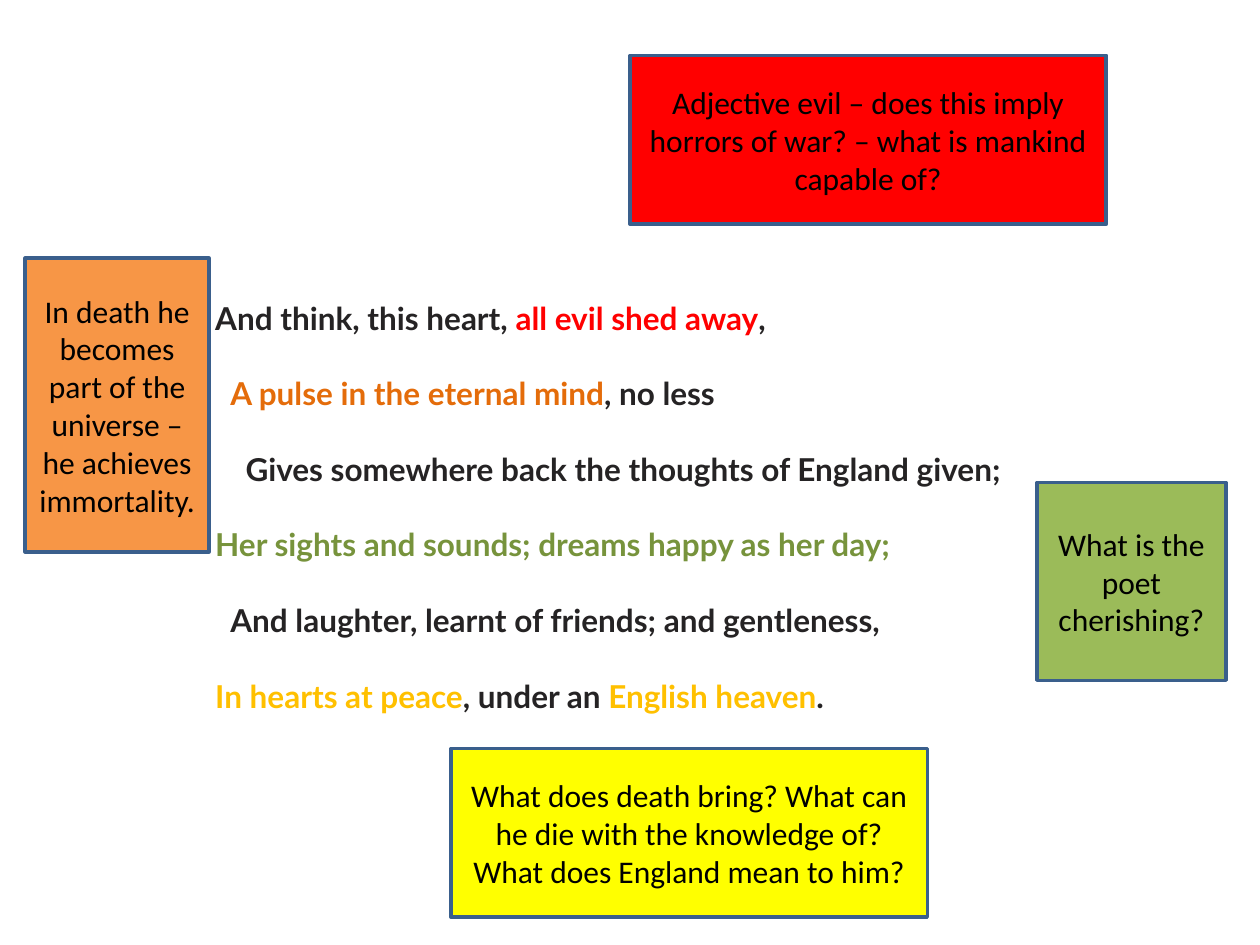
from pptx import Presentation
from pptx import util as u
from pptx.dml.color import RGBColor
from pptx.enum import shapes, text

INK, RED, ORANGE, GREEN, GOLD = "252324", "FF0000", "E46C0A", "77933C", "FFC000"
BORDER = "3A5F8C"
INDENT = 0.12

POEM = [
    (0, [("And think, this heart, ", INK), ("all evil shed away", RED), (",", INK)]),
    (1, [("A pulse in the eternal mind", ORANGE), (", no less", INK)]),
    (2, [("Gives somewhere back the thoughts of England given;", INK)]),
    (0, [("Her sights and sounds; dreams happy as her day;", GREEN)]),
    (1, [("And laughter, learnt of friends; and gentleness,", INK)]),
    (0, [("In hearts at peace", GOLD), (", under an ", INK),
         ("English heaven", GOLD), (".", INK)]),
]

NOTES = [
    ((5, 0.44, 3.78, 1.34), "FF0000",
     "Adjective evil – does this imply horrors of war? – what is mankind capable of?"),
    ((0.2, 2.05, 1.46, 2.33), "F79646",
     "In death he becomes part of the universe – he achieves immortality."),
    ((8.23, 3.83, 1.5, 1.57), "9BBB59",
     "What is the poet cherishing?"),
    ((3.58, 5.94, 3.78, 1.34), "FFFF00",
     "What does death bring? What can he die with the knowledge of? "
     "What does England mean to him?"),
]


def color(value):
    """Turn a hex string into a colour."""
    return RGBColor.from_string(value)


def add_span(para, words, font, ink, bold=False):
    """Add one run of 18 point text to a paragraph."""
    span = para.add_run()
    span.text = words
    span.font.name = font
    span.font.size = u.Pt(18)
    span.font.bold = bold
    span.font.color.rgb = color(ink)


def add_poem(page, place, lines):
    """Add the double-spaced poem, one paragraph for each indented line."""
    box = page.shapes.add_textbox(*map(u.Inches, place))
    frame = box.text_frame
    frame.word_wrap = True
    frame.auto_size = text.MSO_AUTO_SIZE.SHAPE_TO_FIT_TEXT
    for number, (level, spans) in enumerate(lines):
        para = frame.add_paragraph() if number else frame.paragraphs[0]
        para.line_spacing = 2.0
        para._p.get_or_add_pPr().set("marL", str(u.Inches(level * INDENT)))
        for words, ink in spans:
            add_span(para, words, "Lato", ink, bold=True)


def add_note(page, place, fill, words):
    """Add a filled rectangle with a centred comment on the poem."""
    box = page.shapes.add_shape(shapes.MSO_SHAPE.RECTANGLE, *map(u.Inches, place))
    box.shadow.inherit = False
    box.fill.solid()
    box.fill.fore_color.rgb = color(fill)
    box.line.color.rgb = color(BORDER)
    box.line.width = u.Pt(2)
    frame = box.text_frame
    frame.word_wrap = True
    frame.vertical_anchor = text.MSO_ANCHOR.MIDDLE
    para = frame.paragraphs[0]
    para.alignment = text.PP_ALIGN.CENTER
    add_span(para, words, "Calibri", "000000")


def main():
    """Build the annotated poem slide and save it."""
    deck = Presentation()
    deck.slide_width, deck.slide_height = u.Inches(10), u.Inches(7.5)
    page = deck.slides.add_slide(deck.slide_layouts[6])
    add_poem(page, (1.61, 2.02, 7.38, 4.41), POEM)
    for place, fill, words in NOTES:
        add_note(page, place, fill, words)
    deck.save("out.pptx")


if __name__ == "__main__":
    main()
